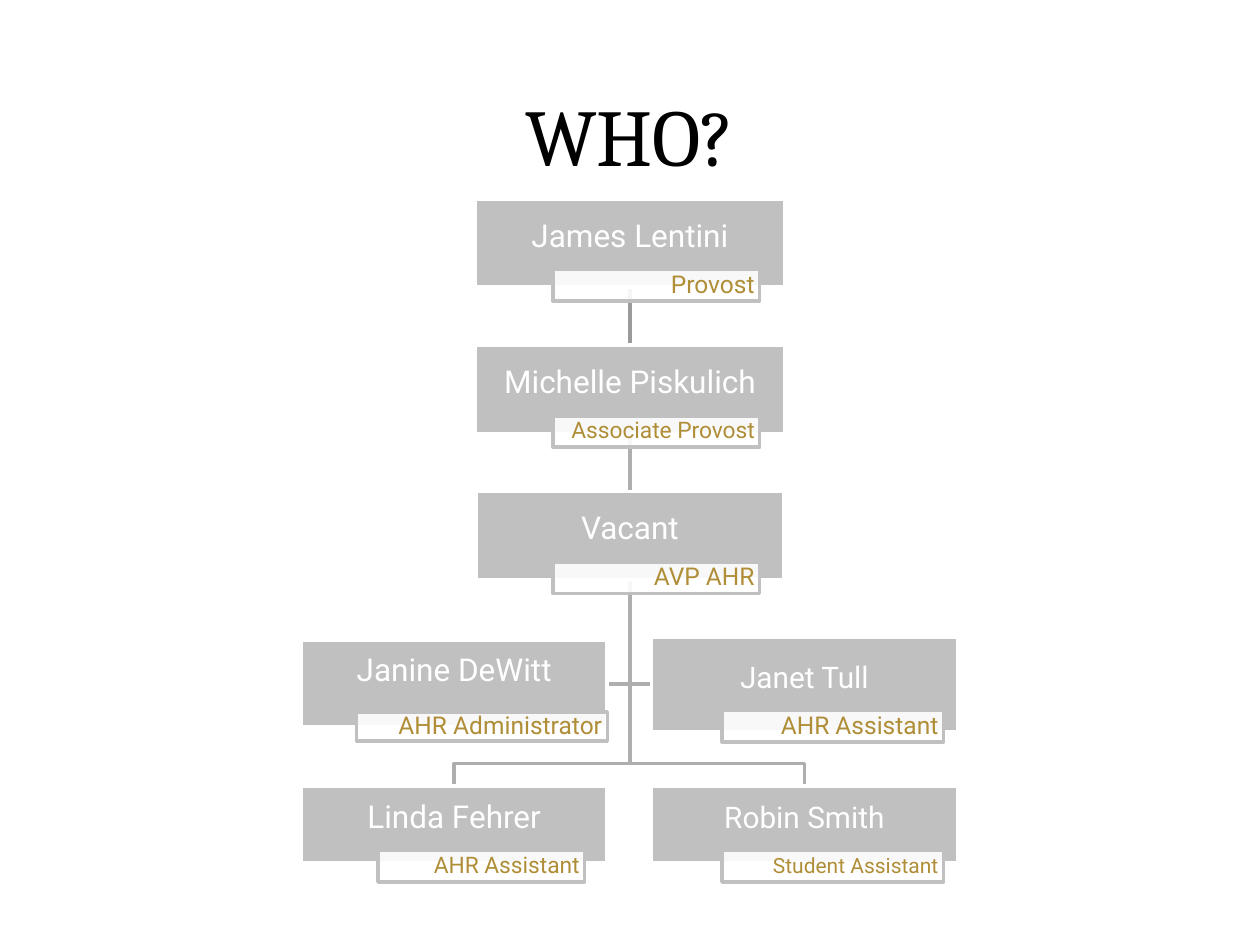
from lxml import etree
from pptx import Presentation
from pptx import util as u
from pptx.dml.color import RGBColor
from pptx.enum import shapes, text
from pptx.oxml.ns import qn

BLACK = RGBColor(0x00, 0x00, 0x00)
WHITE = RGBColor(0xFF, 0xFF, 0xFF)
SILVER = RGBColor(0xC0, 0xC0, 0xC0)
GOLD = RGBColor(0xAF, 0x8E, 0x37)
LINK = RGBColor(0xAE, 0xAE, 0xAE)
TOP_LINK = RGBColor(0x9A, 0x9A, 0x9A)

AXIS = 5.0                    # centre line of the chart
CHAIN_TOP, CHAIN_STEP, CHAIN_HEIGHT = 1.58, 1.16, 0.7
LEFT, RIGHT, BRANCH_WIDTH = 2.39, 5.17, 2.43
STAFF_TOP = 6.24
BUS = STAFF_TOP - 0.18        # level where the lower branches part
ASSISTANT_LEVEL = 5.43

# name, box width, job title, title size
CHAIN = [
    ("James Lentini", 2.46, "Provost", 14),
    ("Michelle Piskulich", 2.45, "Associate Provost", 13),
    ("Vacant", 2.44, "AVP AHR", 14),
]
# name, name size, box, job title, title size, title box, bottom inset of name
BRANCHES = [
    ("Linda Fehrer", 18, (LEFT, STAFF_TOP, BRANCH_WIDTH, 0.61),
     "AHR Assistant", 13, (3, 6.75, 1.64, 0.25), 0.11),
    ("Robin Smith", 17, (RIGHT, STAFF_TOP, BRANCH_WIDTH, 0.61),
     "Student Assistant", 12, (5.73, 6.75, 1.76, 0.25), 0.11),
    ("Janine DeWitt", 18, (LEFT, 5.08, BRANCH_WIDTH, 0.69),
     "AHR Administrator", 14, (2.83, 5.65, 1.99, 0.23), 0.21),
    ("Janet Tull", 17, (RIGHT, 5.06, BRANCH_WIDTH, 0.75),
     "AHR Assistant", 14, (5.73, 5.64, 1.76, 0.25), 0.11),
]


def write(shape, words, font, size, color, align, anchor, insets):
    frame = shape.text_frame
    frame.word_wrap = True
    frame.vertical_anchor = anchor
    (frame.margin_left, frame.margin_top,
     frame.margin_right, frame.margin_bottom) = map(u.Inches, insets)
    frame.text = words
    line = frame.paragraphs[0]
    line.alignment = align
    line.line_spacing = 0.9
    run_font = line.runs[0].font
    run_font.name, run_font.size = font, u.Pt(size)
    run_font.color.rgb = color


def add_title(slide, box):
    title = slide.shapes.add_textbox(*map(u.Inches, box))
    write(title, "WHO?", "Cambria", 46, BLACK, text.PP_ALIGN.CENTER,
          text.MSO_ANCHOR.BOTTOM, (0.1, 0.05, 0.1, 0.05))
    title.text_frame.paragraphs[0].line_spacing = 1.0


def add_panel(slide, box, fill, outline):
    panel = slide.shapes.add_shape(
        shapes.MSO_SHAPE.RECTANGLE, *map(u.Inches, box))
    panel.shadow.inherit = False
    panel.fill.solid()
    panel.fill.fore_color.rgb = fill
    panel.line.color.rgb = outline
    panel.line.width = u.Pt(2)
    return panel


def add_person(slide, name, name_size, box, job, job_size, job_box, bottom=0.11):
    person = add_panel(slide, box, SILVER, WHITE)
    write(person, name, "Roboto", name_size, WHITE, text.PP_ALIGN.CENTER,
          text.MSO_ANCHOR.MIDDLE, (0.01, 0.01, 0.01, bottom))

    # Job title plate, slightly see-through
    plate = add_panel(slide, job_box, WHITE, SILVER)
    color = plate._element.spPr.find(qn("a:solidFill"))[0]
    etree.SubElement(color, qn("a:alpha")).set("val", "90000")
    write(plate, job, "Roboto", job_size, GOLD, text.PP_ALIGN.RIGHT,
          text.MSO_ANCHOR.MIDDLE, (0.04, 0.01, 0.04, 0.01))
    return person


def add_branch(slide, points):
    start, *rest = [(u.Inches(x), u.Inches(y)) for x, y in points]
    builder = slide.shapes.build_freeform(*start)
    builder.add_line_segments(rest, close=False)
    branch = builder.convert_to_shape()
    branch.shadow.inherit = False
    branch.fill.background()
    branch.line.color.rgb = LINK
    branch.line.width = u.Pt(2)


def add_chain_link(slide, top, bottom, color):
    link = slide.shapes.add_connector(
        shapes.MSO_CONNECTOR.STRAIGHT, u.Inches(AXIS), u.Inches(top),
        u.Inches(AXIS), u.Inches(bottom))
    link.line.color.rgb = color
    link.line.width = u.Pt(2)
    etree.SubElement(link._element.spPr, qn("a:effectLst"))
    return link


def add_org_chart(slide):
    tops = [CHAIN_TOP + i * CHAIN_STEP for i in range(len(CHAIN))]
    fork = tops[-1] + CHAIN_HEIGHT

    # Lines lie behind the boxes
    for side in (RIGHT, LEFT + BRANCH_WIDTH):
        add_branch(slide, [(AXIS, fork), (AXIS, ASSISTANT_LEVEL),
                           (side, ASSISTANT_LEVEL)])
    for side in (RIGHT, LEFT):
        middle = side + BRANCH_WIDTH / 2
        add_branch(slide, [(AXIS, fork), (AXIS, BUS), (middle, BUS),
                           (middle, STAFF_TOP)])
    links = [add_chain_link(slide, upper + CHAIN_HEIGHT, lower, color)
             for upper, lower, color in zip(tops, tops[1:], (TOP_LINK, LINK))]

    # Chain of command
    chain = [add_person(slide, name, 18,
                        (AXIS - width / 2, top, width, CHAIN_HEIGHT),
                        job, job_size, (4.39, top + 0.56, 1.64, 0.25))
             for top, (name, width, job, job_size) in zip(tops, CHAIN)]
    for link, upper, lower in zip(links, chain, chain[1:]):
        link.begin_connect(upper, 2)
        link.end_connect(lower, 0)

    # Assistants and staff
    for branch in BRANCHES:
        add_person(slide, *branch)


def main():
    deck = Presentation()
    deck.slide_width, deck.slide_height = u.Inches(10), u.Inches(7.5)
    slide = deck.slides.add_slide(deck.slide_layouts[6])
    add_title(slide, (0.6, 0.75, 8.8, 0.75))
    add_org_chart(slide)
    deck.save("out.pptx")


if __name__ == "__main__":
    main()
